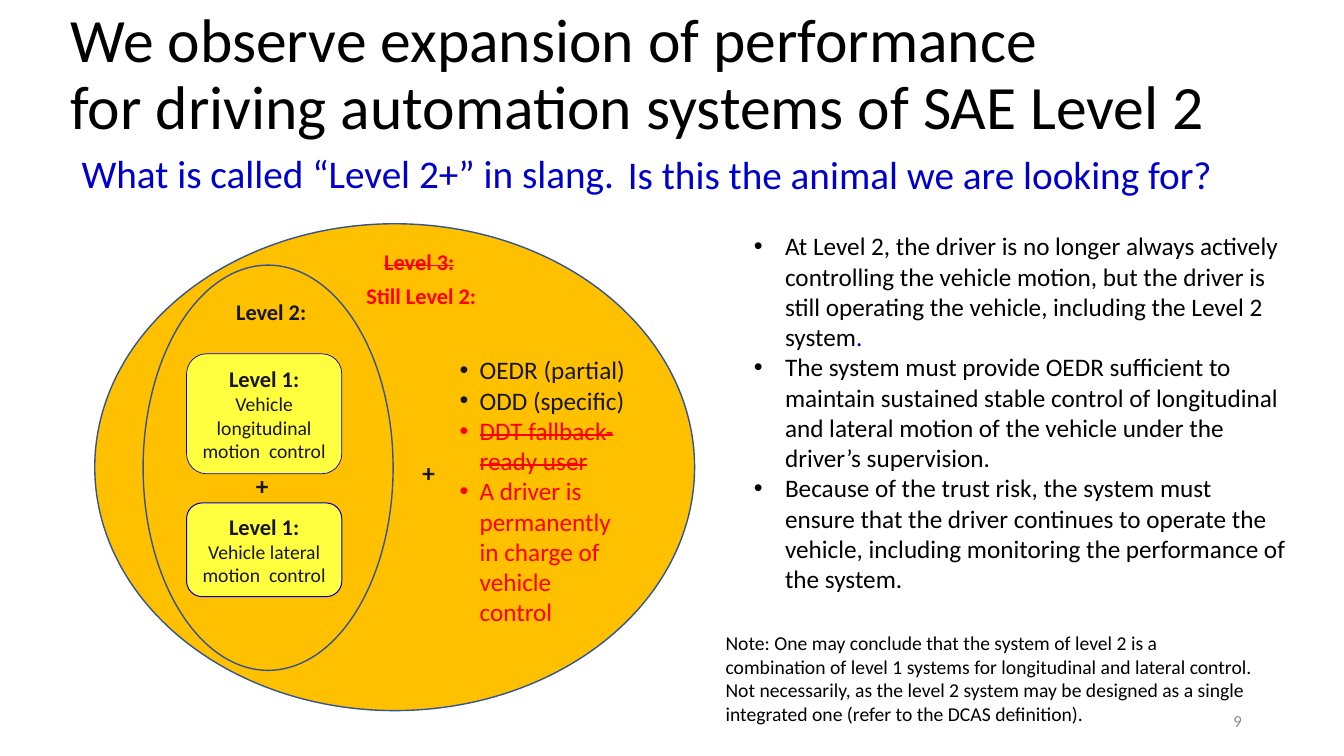
from lxml.etree import SubElement
from pptx import Presentation
from pptx.dml.color import RGBColor
from pptx.enum.shapes import MSO_SHAPE as Shape
from pptx.enum.text import MSO_ANCHOR as Anchor, PP_ALIGN as Align
from pptx.oxml.ns import qn
from pptx.util import Inches, Pt

BLACK = RGBColor(0x00, 0x00, 0x00)
INK = RGBColor(0x18, 0x17, 0x17)
RED = RGBColor(0xFF, 0x00, 0x00)
BLUE = RGBColor(0x00, 0x00, 0xCC)
GRAY = RGBColor(0x8C, 0x8C, 0x8C)
WHITE = RGBColor(0xFF, 0xFF, 0xFF)
AMBER = RGBColor(0xFF, 0xC0, 0x00)
YELLOW = RGBColor(0xFF, 0xFF, 0x3F)
OUTLINE = RGBColor(0x32, 0x54, 0x91)

# Areas are (left, top, width, height) in percent of the slide's size.
TITLE = ("We observe expansion of performance ",
         "for driving automation systems of SAE Level 2")
TITLE_AREA = (4.5, 0.4, 86.25, 19.33)
QUESTIONS = [
    ("What is called “Level 2+” in slang.", (5.33, 19.07, 51.38, 7.6)),
    ("Is this the animal we are looking for?", (45.98, 19.2, 45.53, 7.6)),
]
LEVEL_ELLIPSES = [(7.05, 29.6, 44.63, 64.4), (10.65, 35.07, 18.6, 53.6)]
LEVEL_1_BOXES = [
    ("Vehicle longitudinal motion  control", 46.8, 15.87, 0.5),
    ("Vehicle lateral motion  control", 66.53, 12.4, 0.75),
]
BOX_LEFT, BOX_WIDTH = 13.88, 11.55
LABEL_WIDTH, PLUS_WIDTH, LABEL_HEIGHT = 12.6, 3.08, 4.93
LEVEL_LABELS = [
    ("Level 2:", 13.88, 38.8, {"color": INK}),
    ("Level 3:", 24.9, 32.13, {"color": RED, "strike": True}),
    ("Still Level 2:", 25.05, 36.67, {"color": RED}),
]
PLUS_SIGNS = [(18.3, 61.6), (30.68, 59.87)]
# A paragraph is a list of runs; a run is its text and its own format.
FEATURES = [
    [("OEDR (partial)", {})],
    [("ODD (specific)", {})],
    [("DDT fallback-ready user", {"color": RED, "strike": True})],
    [("A driver is permanently in charge of vehicle control", {"color": RED})],
]
FEATURES_AREA = (33.45, 46.27, 13.95, 42.13)
REMARKS = [
    [("At Level 2, the driver is no longer always actively controlling the "
      "vehicle motion, but the driver is still operating the vehicle, "
      "including the Level 2 system", {}), (".", {"color": BLUE})],
    [("The system must provide OEDR sufficient to maintain sustained stable "
      "control of longitudinal and lateral motion of the vehicle under the "
      "driver’s supervision.", {})],
    [("Because of the trust risk, the system must ensure that the driver "
      "continues to operate the vehicle, including monitoring the "
      "performance of the system.", {})],
]
REMARKS_AREA = (55.35, 29.87, 41.1, 49.87)
NOTE = ("Note: One may conclude that the system of level 2 is a combination "
        "of level 1 systems for longitudinal and lateral control. Not "
        "necessarily, as the level 2 system may be designed as a single "
        "integrated one (refer to the DCAS definition).")
NOTE_AREA = (53.25, 82.8, 41.1, 13.87)
PAGE_NUMBER = "9"
PAGE_NUMBER_AREA = (70.65, 92.67, 22.5, 5.33)

deck = Presentation()
deck.slide_width, deck.slide_height = Inches(13.33), Inches(7.5)
slide = deck.slides.add_slide(deck.slide_layouts[6])


def place(area):
    sides = (deck.slide_width, deck.slide_height) * 2
    return [round(side * share / 100) for side, share in zip(sides, area)]


def add_shape(kind, area, fill, line=None, line_width=1):
    shape = slide.shapes.add_shape(kind, *place(area))
    shape.shadow.inherit = False
    shape.fill.solid()
    shape.fill.fore_color.rgb = fill
    if line is None:
        shape.line.fill.background()
    else:
        shape.line.color.rgb = line
        shape.line.width = Pt(line_width)
    return shape


def add_bullet(paragraph, indent):
    properties = paragraph._p.get_or_add_pPr()
    properties.set("marL", str(Inches(indent)))
    properties.set("indent", str(-Inches(indent)))
    SubElement(properties, qn("a:buFont")).set("typeface", "Arial")
    SubElement(properties, qn("a:buChar")).set("char", "•")


def add_text(content, area=None, shape=None, size=18, color=BLACK, bold=False,
             align=Align.LEFT, anchor=Anchor.TOP, spacing=None, indent=None):
    """Write a string or a list of paragraphs into a shape or a new text box."""
    holder = shape or slide.shapes.add_textbox(*place(area))
    frame = holder.text_frame
    frame.word_wrap = True
    frame.vertical_anchor = anchor
    paragraphs = [[(content, {})]] if isinstance(content, str) else content
    for index, runs in enumerate(paragraphs):
        paragraph = frame.add_paragraph() if index else frame.paragraphs[0]
        paragraph.alignment = align
        if spacing:
            paragraph.line_spacing = spacing
        if indent:
            add_bullet(paragraph, indent)
        for words, own in runs:
            if own.get("new_line"):
                paragraph.add_line_break()
            run = paragraph.add_run()
            run.text = words
            run.font.name = "Calibri"
            run.font.size = Pt(own.get("size", size))
            run.font.bold = own.get("bold", bold)
            run.font.color.rgb = own.get("color", color)
            if own.get("strike"):
                run.font._element.set("strike", "sngStrike")


first_line, second_line = TITLE
add_text([[(first_line, {}), (second_line, {"new_line": True})]], TITLE_AREA,
         size=44, anchor=Anchor.MIDDLE, spacing=0.9)

for ellipse_area in LEVEL_ELLIPSES:
    add_shape(Shape.OVAL, ellipse_area, AMBER, OUTLINE)

for task, top, height, border in LEVEL_1_BOXES:
    box = add_shape(Shape.ROUNDED_RECTANGLE, (BOX_LEFT, top, BOX_WIDTH, height),
                    YELLOW, BLUE, border)
    add_text([[("Level 1:", {"size": 16, "bold": True})], [(task, {})]],
             shape=box, size=14, color=INK, align=Align.CENTER,
             anchor=Anchor.MIDDLE)

for label, left, top, look in LEVEL_LABELS:
    add_text([[(label, look)]], (left, top, LABEL_WIDTH, LABEL_HEIGHT),
             size=16, bold=True, align=Align.CENTER)
for left, top in PLUS_SIGNS:
    add_text("+", (left, top, PLUS_WIDTH, LABEL_HEIGHT), color=INK, bold=True)

add_text(FEATURES, FEATURES_AREA, color=INK, indent=0.2)
add_text(PAGE_NUMBER, PAGE_NUMBER_AREA, size=12, color=GRAY,
         align=Align.RIGHT, anchor=Anchor.MIDDLE)
for question, question_area in QUESTIONS:
    add_text(question, question_area, size=28, color=BLUE)
add_text(NOTE, NOTE_AREA, size=14)
remarks_panel = add_shape(Shape.RECTANGLE, REMARKS_AREA, WHITE)
add_text(REMARKS, shape=remarks_panel, indent=0.31)

deck.save("out.pptx")
